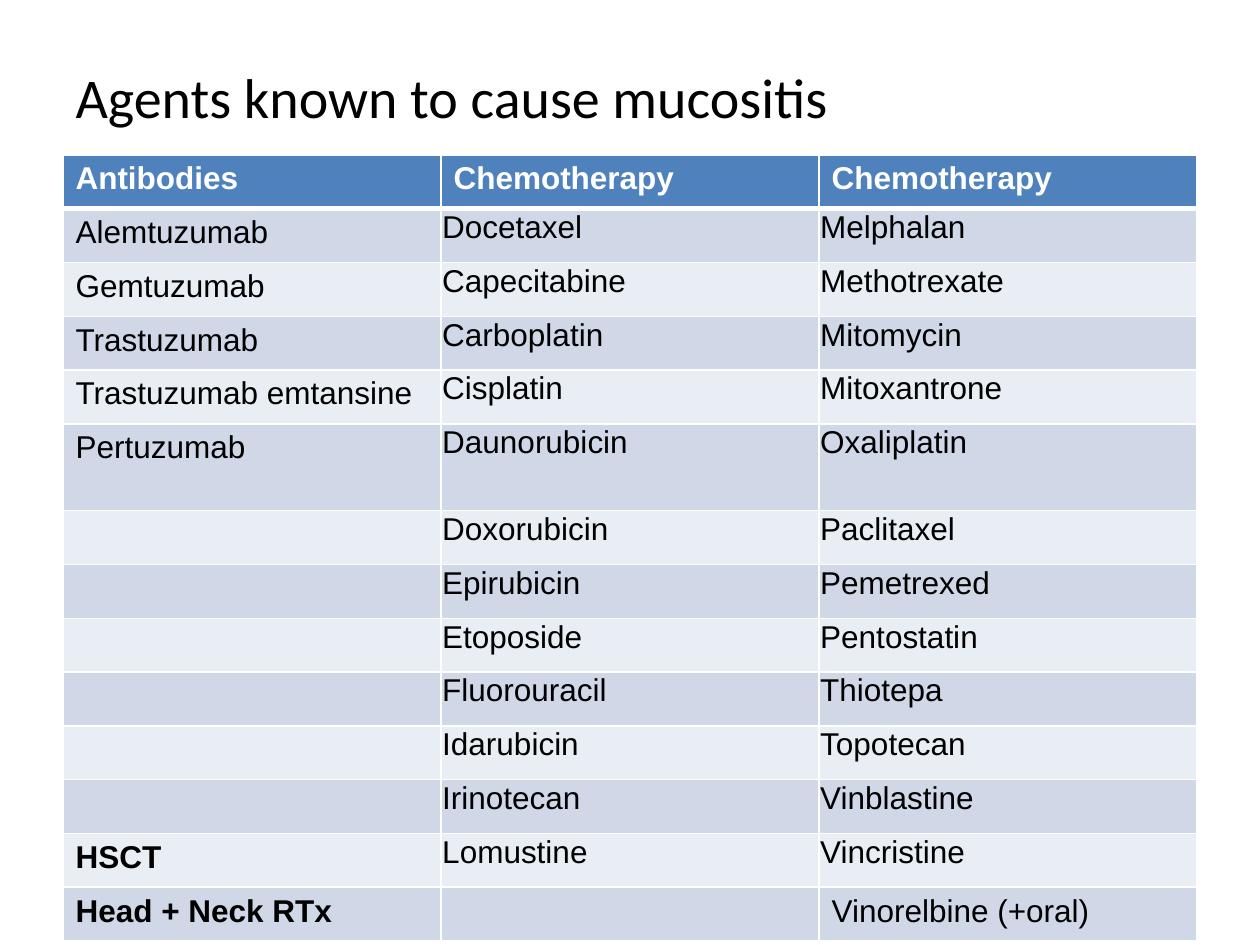
from lxml import etree
from pptx import Presentation
from pptx.dml.color import RGBColor
from pptx.enum.text import MSO_ANCHOR, PP_ALIGN
from pptx.oxml.ns import qn
from pptx.util import Emu, Inches, Pt

LEFT, MIDDLE = PP_ALIGN.LEFT, MSO_ANCHOR.MIDDLE
TITLE_ONLY = 5
COLORS = {"text": "000000", "white": "FFFFFF", "header": "4F81BD",
          "odd": "D0D8E8", "even": "E9EDF4"}

HEADER = ["Antibodies", "Chemotherapy", "Chemotherapy"]
ANTIBODIES = ["Alemtuzumab", "Gemtuzumab", "Trastuzumab", "Trastuzumab emtansine",
              "Pertuzumab", "", "", "", "", "", "", "HSCT", "Head + Neck RTx"]
CHEMO_D_TO_L = ["Docetaxel", "Capecitabine", "Carboplatin", "Cisplatin", "Daunorubicin",
                "Doxorubicin", "Epirubicin", "Etoposide", "Fluorouracil", "Idarubicin",
                "Irinotecan", "Lomustine", ""]
CHEMO_M_TO_V = ["Melphalan", "Methotrexate", "Mitomycin", "Mitoxantrone", "Oxaliplatin",
                "Paclitaxel", "Pemetrexed", "Pentostatin", "Thiotepa", "Topotecan",
                "Vinblastine", "Vincristine", "Vinorelbine (+oral)"]
BOLD = {"HSCT", "Head + Neck RTx"}
ROWS = [HEADER, *zip(ANTIBODIES, CHEMO_D_TO_L, CHEMO_M_TO_V)]
TALL_ROW, TALL_HEIGHT = ANTIBODIES.index("Pertuzumab") + 1, Inches(0.69)


def write(tf, text, *, size=18, font="Arial", color="text", bold=False):
    p = tf.paragraphs[0]
    p.alignment = LEFT
    r = p.add_run()
    r.text = text
    r.font.size, r.font.name, r.font.bold = Pt(size), font, bold
    r.font.color.rgb = RGBColor.from_string(COLORS[color])


def set_borders(cell, top=1, bottom=1):
    tc_pr = cell._tc.get_or_add_tcPr()
    for side, width in (("L", 1), ("R", 1), ("T", top), ("B", bottom)):
        ln = etree.SubElement(tc_pr, qn(f"a:ln{side}"), w=str(Pt(width)))
        fill = etree.SubElement(ln, qn("a:solidFill"))
        etree.SubElement(fill, qn("a:srgbClr"), val=COLORS["white"])


class SlideBuilder:
    """Holds the current slide; positions are shares of the slide's size."""

    def __init__(self, prs):
        self.width, self.height = prs.slide_width, prs.slide_height
        self.slide = prs.slides.add_slide(prs.slide_layouts[TITLE_ONLY])

    def box(self, x, y, w, h):
        return (Emu(int(x * self.width)), Emu(int(y * self.height)),
                Emu(int(w * self.width)), Emu(int(h * self.height)))

    def title(self, text, *share):
        sp = self.slide.shapes.title
        sp.left, sp.top, sp.width, sp.height = self.box(*share)
        sp.text_frame.vertical_anchor = MIDDLE
        write(sp.text_frame, text, size=32, font="Calibri")

    def table(self, rows, *share):
        box = self.box(*share)
        table = self.slide.shapes.add_table(len(rows), len(rows[0]), *box).table
        row_height = (box[3] - TALL_HEIGHT) // (len(rows) - 1)
        for i, row in enumerate(rows):
            table.rows[i].height = TALL_HEIGHT if i == TALL_ROW else row_height
            for j, text in enumerate(row):
                self.cell(table.cell(i, j), text, i, j, i == len(rows) - 1)

    def cell(self, cell, text, i, j, last):
        header = i == 0
        set_borders(cell, top=3 if i == 1 else 1, bottom=3 if header else 1)
        cell.fill.solid()
        fill = "header" if header else "odd" if i % 2 else "even"
        cell.fill.fore_color.rgb = RGBColor.from_string(COLORS[fill])
        if j and not header and not last:
            cell.margin_left = cell.margin_right = cell.margin_top = Inches(0.01)
            cell.margin_bottom = 0
        if text:
            write(cell.text_frame, text, color="white" if header else "text",
                  bold=header or text in BOLD)


def main():
    prs = Presentation()
    prs.slide_width, prs.slide_height = Inches(10), Inches(7.5)
    page = SlideBuilder(prs)
    page.title("Agents known to cause mucositis", 0.05, 0.04, 0.9, 0.124)
    page.table(ROWS, 0.05, 0.164, 0.9, 0.832)
    prs.save("out.pptx")


if __name__ == "__main__":
    main()
